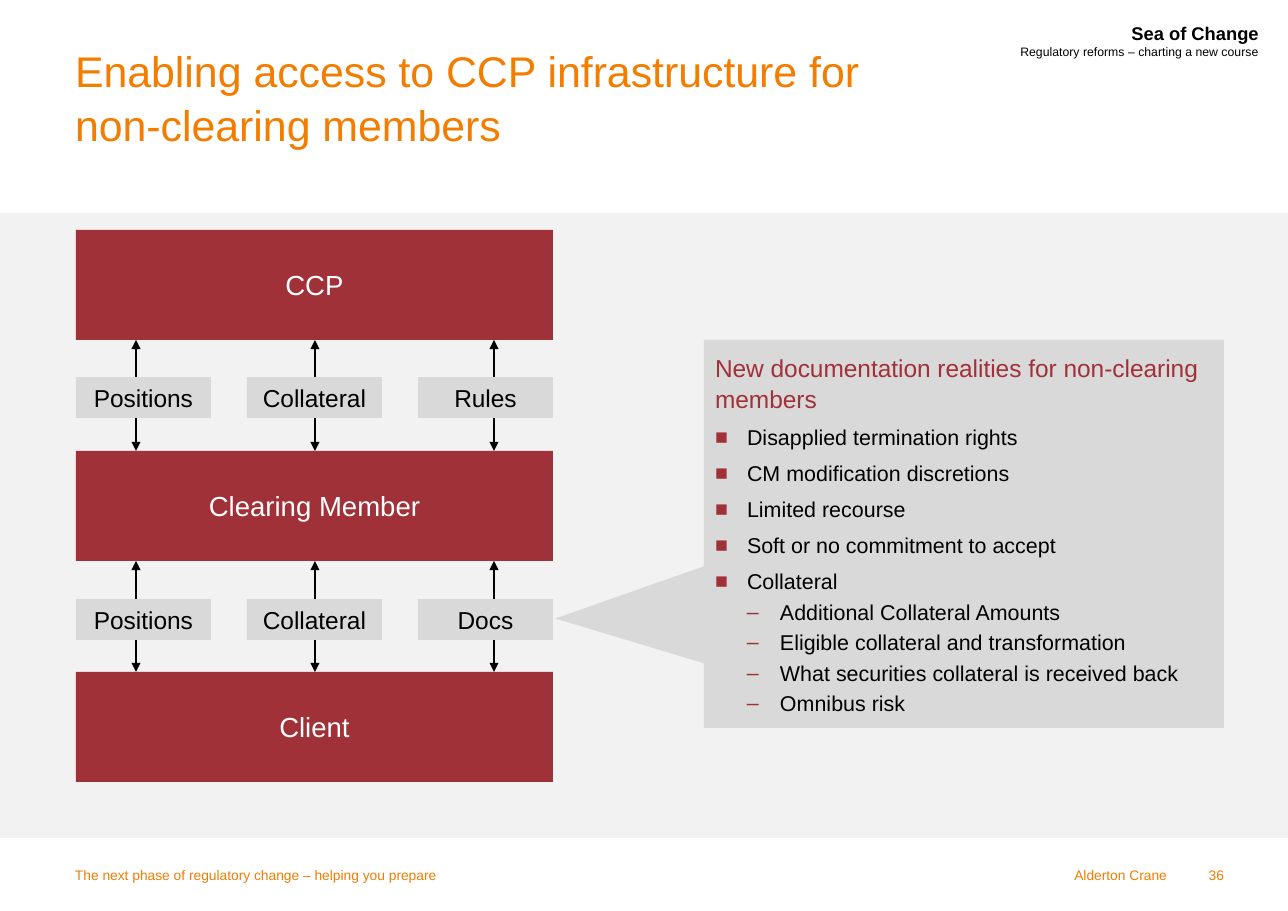
from lxml.etree import SubElement
from pptx import Presentation
from pptx.dml.color import RGBColor
from pptx.enum.shapes import MSO_CONNECTOR, MSO_SHAPE
from pptx.enum.text import MSO_ANCHOR, MSO_AUTO_SIZE, PP_ALIGN
from pptx.oxml.ns import qn
from pptx.util import Pt

PX = 8299
ORANGE = RGBColor(0xF2, 0x7D, 0x00)
RED = RGBColor(0xA1, 0x31, 0x38)
BLACK = RGBColor(0, 0, 0)
WHITE = RGBColor(0xFF, 0xFF, 0xFF)
GREY = RGBColor(0xD9, 0xD9, 0xD9)
PALE = RGBColor(0xF2, 0xF2, 0xF2)

FRAME = {
    "word_wrap": True, "auto_size": MSO_AUTO_SIZE.NONE,
    "margin_left": 12 * PX, "margin_right": 12 * PX,
    "margin_top": 6 * PX, "margin_bottom": 6 * PX,
}


def write(frame, lines, align=PP_ALIGN.LEFT, anchor=MSO_ANCHOR.MIDDLE, spacing=1.0):
    for key, value in {**FRAME, "vertical_anchor": anchor}.items():
        setattr(frame, key, value)
    for index, (words, size, color, bold) in enumerate(lines):
        paragraph = frame.paragraphs[0] if index == 0 else frame.add_paragraph()
        paragraph.text = words
        for key, value in {"alignment": align, "line_spacing": spacing}.items():
            setattr(paragraph, key, value)
        for key, value in {"name": "Arial", "size": Pt(size), "bold": bold}.items():
            setattr(paragraph.font, key, value)
        paragraph.font.color.rgb = color


def panel(preset, box, color):
    shape = slide.shapes.add_shape(preset, *(n * PX for n in box))
    shape.shadow.inherit = False
    shape.fill.solid()
    shape.fill.fore_color.rgb = color
    shape.line.fill.background()
    return shape


deck = Presentation()
deck.slide_width, deck.slide_height = 1288 * PX, 911 * PX
slide = deck.slides.add_slide(deck.slide_layouts[5])

panel(MSO_SHAPE.RECTANGLE, (0, 213, 1288, 625), PALE)

title = slide.shapes.title
for side, length in {"left": 63, "top": 36, "width": 979, "height": 152}.items():
    setattr(title, side, length * PX)
write(title.text_frame,
      [("Enabling access to CCP infrastructure for\vnon-clearing members", 28, ORANGE, False)],
      anchor=MSO_ANCHOR.TOP, spacing=1.05)

margin_texts = [
    ((990, 16, 281, 49), PP_ALIGN.RIGHT,
     [("Sea of Change", 12, BLACK, True),
      ("Regulatory reforms – charting a new course", 8, BLACK, False)]),
    ((63, 855, 828, 39), PP_ALIGN.LEFT,
     [("The next phase of regulatory change – helping you prepare", 9, ORANGE, False)]),
    ((890, 855, 289, 39), PP_ALIGN.RIGHT, [("Alderton Crane", 9, ORANGE, False)]),
    ((1179, 855, 57, 39), PP_ALIGN.RIGHT, [("36", 9, ORANGE, False)]),
]
for box, align, lines in margin_texts:
    margin_text = slide.shapes.add_textbox(*(n * PX for n in box))
    write(margin_text.text_frame, lines, align)

for row, party in enumerate(["CCP", "Clearing Member", "Client"]):
    block = panel(MSO_SHAPE.RECTANGLE, (76, 230 + 221 * row, 477, 110), RED)
    write(block.text_frame, [(party, 18, WHITE, False)], PP_ALIGN.CENTER)

flows = [["Positions", "Collateral", "Rules"], ["Positions", "Collateral", "Docs"]]
for row, names in enumerate(flows):
    for column, name in enumerate(names):
        x, y = 136 + 179 * column, 340 + 221 * row
        arrow = slide.shapes.add_connector(
            MSO_CONNECTOR.STRAIGHT, x * PX, y * PX, x * PX, (y + 111) * PX)
        arrow.line.color.rgb = BLACK
        arrow.line.width = Pt(1)
        outline = arrow.line._get_or_add_ln()
        for end in ("a:headEnd", "a:tailEnd"):
            SubElement(outline, qn(end), type="triangle")
        SubElement(outline.getparent(), qn("a:effectLst"))

        label = panel(MSO_SHAPE.RECTANGLE, (76 + 171 * column, 377 + 222 * row, 135, 41), GREY)
        write(label.text_frame, [(name, 16, BLACK, False)], PP_ALIGN.CENTER)

callout = panel(MSO_SHAPE.RECTANGULAR_CALLOUT, (704, 340, 520, 388), GREY)
callout.adjustments[0], callout.adjustments[1] = -0.786, 0.218
heading = "New documentation realities for non-clearing members"
realities = ["Disapplied termination rights", "CM modification discretions", "Limited recourse",
             "Soft or no commitment to accept", "Collateral"]
collateral_points = ["Additional Collateral Amounts", "Eligible collateral and transformation",
                     "What securities collateral is received back", "Omnibus risk"]
write(callout.text_frame,
      [(heading, 16, RED, False)]
      + [(point, 14, BLACK, False) for point in realities + collateral_points],
      spacing=1.05)
callout.text_frame.margin_left = callout.text_frame.margin_right = 11 * PX

bullets = [("■", 32, 32, 6)] * len(realities) + [("–", 65, 33, 2.3)] * len(collateral_points)
for paragraph, (mark, indent, hang, gap) in zip(callout.text_frame.paragraphs[1:], bullets):
    paragraph.space_before = Pt(gap)
    properties = paragraph._p.get_or_add_pPr()
    properties.set("marL", str(indent * PX))
    properties.set("indent", str(-hang * PX))
    bullet_color = SubElement(properties, qn("a:buClr"))
    SubElement(bullet_color, qn("a:srgbClr"), val=str(RED))
    SubElement(properties, qn("a:buFont"), typeface="Arial")
    SubElement(properties, qn("a:buChar"), char=mark)
    properties.append(properties.find(qn("a:defRPr")))

deck.save("out.pptx")
